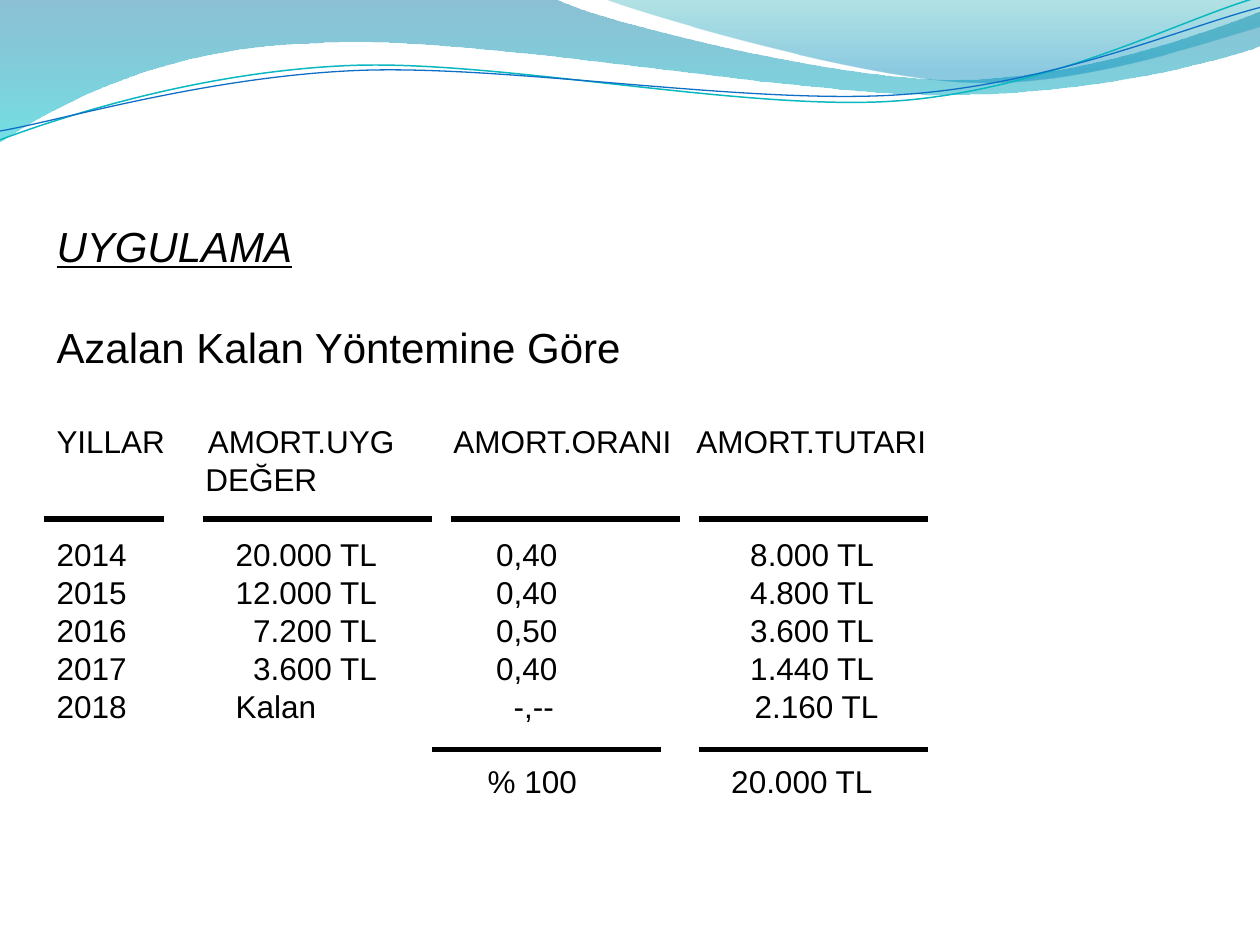
from math import cos, radians, sin

from lxml.etree import SubElement
from pptx import Presentation
from pptx.dml.color import RGBColor
from pptx.enum.shapes import MSO_CONNECTOR as Connector
from pptx.enum.text import MSO_AUTO_SIZE as AutoSize, PP_ALIGN as Align
from pptx.oxml.ns import qn
from pptx.util import Cm, Pt

COLORS = {
    "text": "000000", "deep": "0074A1", "aqua": "00C6CF",
    "teal": "00A1A9", "sky": "008BBF", "wave": "0AB8BF", "blue": "0F6FC6",
}
INCH = 2.54
TILT = 2.7


def level(point, center):
    dx, dy = point[0] - center[0], point[1] - center[1]
    c, s = cos(radians(TILT)), sin(radians(TILT))
    return center[0] + dx * c - dy * s, center[1] + dx * s + dy * c


class SlideWriter:
    font = "Arial"

    def __init__(self, slide):
        self.s = slide

    def rgb(self, name):
        return RGBColor.from_string(COLORS[name])

    def outline(self, start, segments, closed):
        points = [start] + [p for segment in segments for p in segment]
        emu = [(Cm(x * INCH), Cm(y * INCH)) for x, y in points]
        builder = self.s.shapes.build_freeform(*emu[0], scale=1.0)
        builder.add_line_segments(emu[1:], close=closed)
        sp = builder.convert_to_shape()
        sp.shadow.inherit = False
        steps = iter(list(sp._element.spPr.iter(qn("a:lnTo"))))
        for segment in segments:
            step = next(steps)
            if len(segment) == 3:
                step.tag = qn("a:cubicBezTo")
                for extra in (next(steps), next(steps)):
                    step.append(extra[0])
                    extra.getparent().remove(extra)
        return sp

    def band(self, start, segments, stops):
        sp = self.outline(start, segments, True)
        sp.line.fill.background()
        sp.fill.gradient()
        sp.fill.gradient_angle = 270
        for stop, (position, color, alpha) in zip(sp.fill.gradient_stops, stops):
            stop.position = position
            stop.color.rgb = self.rgb(color)
        for clr, (_, _, alpha) in zip(sp._element.spPr.iter(qn("a:srgbClr")), stops):
            SubElement(clr, qn("a:alpha")).set("val", str(alpha * 1000))

    def wave(self, start, segments, center, color, width):
        flat = [[level(p, center) for p in segment] for segment in segments]
        sp = self.outline(level(start, center), flat, False)
        sp.rotation = 360 - TILT
        sp.fill.background()
        sp.line.color.rgb = self.rgb(color)
        sp.line.width = Pt(width)
        return sp

    def group(self, shapes):
        self.s.shapes.add_group_shape(shapes)

    def rule(self, x1, x2, y):
        line = self.s.shapes.add_connector(
            Connector.STRAIGHT, Cm(x1), Cm(y), Cm(x2), Cm(y))
        line.line.color.rgb = self.rgb("text")
        line.line.width = Pt(3)
        SubElement(line._element.spPr, qn("a:effectLst"))

    def text_box(self, x, y, w, h):
        tf = self.s.shapes.add_textbox(Cm(x), Cm(y), Cm(w), Cm(h)).text_frame
        tf.word_wrap = True
        tf.auto_size = AutoSize.SHAPE_TO_FIT_TEXT
        return tf

    def paragraph(self, tf, text, size=18, after=0, tabs=(), accent=False):
        p = tf.add_paragraph() if tf.text else tf.paragraphs[0]
        p.text = text
        p.alignment = Align.JUSTIFY
        p.line_spacing = Pt(size * 1.2)
        p.space_after = Pt(after)
        for r in p.runs:
            r.font.name = self.font
            r.font.size = Pt(size)
            r.font.color.rgb = self.rgb("text")
            r.font.italic = r.font.underline = accent
        if tabs:
            tab_list = SubElement(p._p.get_or_add_pPr(), qn("a:tabLst"))
            for position, align in tabs:
                tab = SubElement(tab_list, qn("a:tab"))
                tab.set("pos", str(Cm(position)))
                tab.set("algn", align)


def draw_waves(writer):
    writer.band((0, 0), [
        [(4.4, -0.01)],
        [(4.76, 0.17), (6.64, 0.63), (7.58, 0.63)],
        [(8.53, 0.63), (9.58, 0.26), (10, 0.09)],
        [(10.01, 0.36)],
        [(9.83, 0.44), (8.7, 0.76), (7.46, 0.75)],
        [(6.22, 0.75), (3.82, 0.28), (2.57, 0.34)],
        [(1.29, 0.36), (0.46, 0.83), (-0.01, 1.13)],
    ], [(0, "deep", 45), (1, "aqua", 55)])
    writer.band((4.79, -0.01), [
        [(5.09, 0.11), (6.82, 0.62), (7.69, 0.65)],
        [(8.56, 0.69), (9.61, 0.32), (10, 0.21)],
        [(10, 0)],
    ], [(0, "teal", 30), (0.8, "sky", 45)])

    teal_wave = writer.wave((0, 1.11), [
        [(0.48, 0.93), (1.58, 0.57), (2.77, 0.52)],
        [(3.95, 0.47), (5.93, 0.89), (7.13, 0.8)],
        [(8.33, 0.71), (9.38, 0.15), (9.98, -0.02)],
    ], (4.99, 0.58), "wave", 0.85)
    blue_wave = writer.wave((0, 1.04), [
        [(0.47, 0.96), (1.64, 0.61), (2.83, 0.56)],
        [(4.03, 0.51), (5.97, 0.84), (7.17, 0.75)],
        [(8.36, 0.67), (9.41, 0.21), (10, 0.06)],
    ], (5, 0.59), "blue", 0.75)
    writer.group([teal_wave, blue_wave])


def draw_depreciation(writer):
    header_tabs = [(3.05, "l"), (8, "l"), (12.9, "l")]
    value_tabs = [(6.46, "r"), (9.48, "ctr"), (16.48, "r")]
    rest_tabs = [(3.61, "l"), (9.62, "ctr"), (16.57, "r")]
    total_tabs = [(9.59, "ctr"), (16.45, "r")]

    tf = writer.text_box(0.89, 4.32, 23.85, 12.07)
    writer.paragraph(tf, "UYGULAMA", 24, 28.8, accent=True)
    writer.paragraph(tf, "Azalan Kalan Yöntemine Göre", 24, 28.8)
    writer.paragraph(tf, "YILLAR\tAMORT.UYG\tAMORT.ORANI\tAMORT.TUTARI", tabs=header_tabs)
    writer.paragraph(tf, "\tDEĞER", after=21.6, tabs=[(3, "l")])
    for row in [
        ("2014", "20.000 TL", "0,40", "8.000 TL"),
        ("2015", "12.000 TL", "0,40", "4.800 TL"),
        ("2016", "7.200 TL", "0,50", "3.600 TL"),
        ("2017", "3.600 TL", "0,40", "1.440 TL"),
    ]:
        writer.paragraph(tf, "\t".join(row), tabs=value_tabs)
    writer.paragraph(tf, "2018\tKalan\t-,--\t2.160 TL", after=21.6, tabs=rest_tabs)
    writer.paragraph(tf, "\t% 100\t20.000 TL", tabs=total_tabs)

    header_y, total_y, width = 10.46, 15.11, 4.61
    writer.rule(0.89, 3.3, header_y)
    for x, y in [(4.09, header_y), (9.09, header_y), (14.09, header_y),
                 (8.71, total_y), (14.09, total_y)]:
        writer.rule(x, x + width, y)


def main():
    prs = Presentation()
    prs.slide_width, prs.slide_height = Cm(25.4), Cm(19.05)
    writer = SlideWriter(prs.slides.add_slide(prs.slide_layouts[6]))
    draw_waves(writer)
    draw_depreciation(writer)
    prs.save("out.pptx")


if __name__ == "__main__":
    main()
